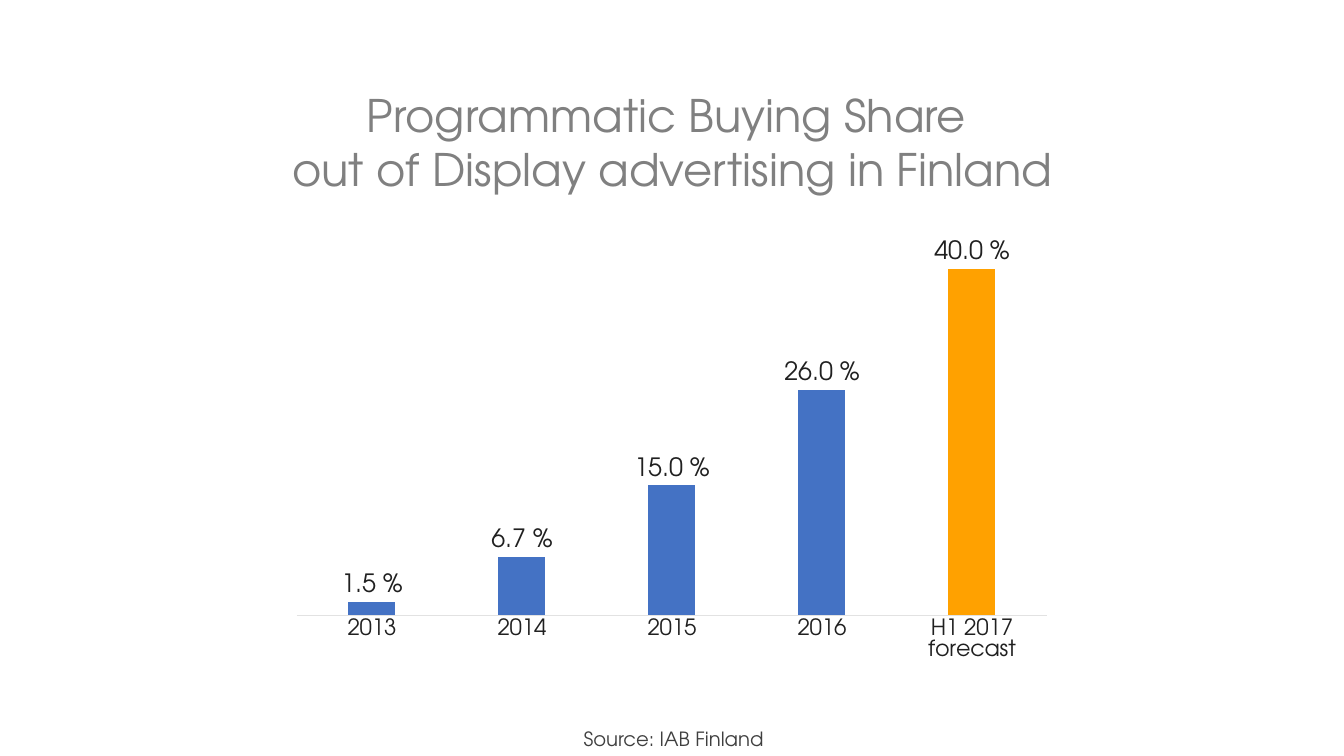
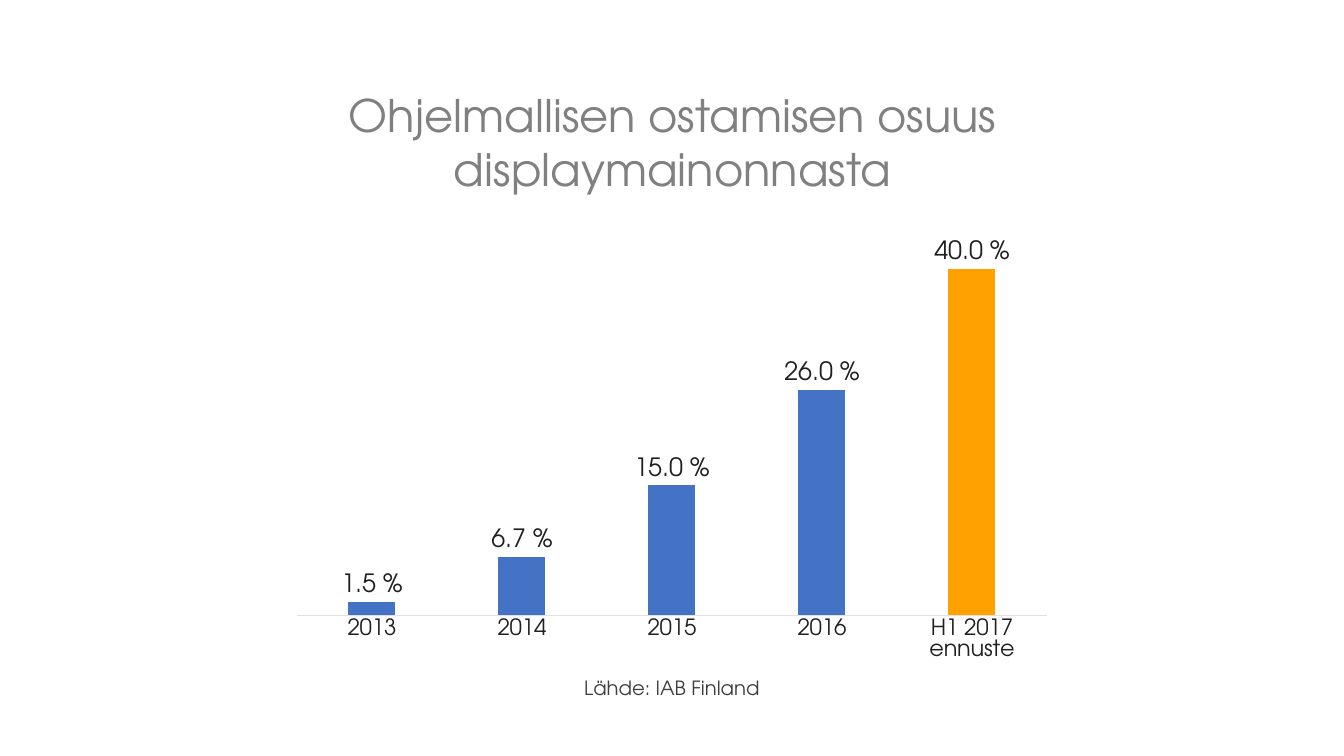
from dataclasses import dataclass

from pptx import Presentation
from pptx.chart.data import CategoryChartData
from pptx.dml.color import RGBColor
from pptx.enum.chart import XL_CHART_TYPE, XL_LABEL_POSITION, XL_TICK_MARK
from pptx.enum.text import MSO_ANCHOR, MSO_AUTO_SIZE, PP_ALIGN
from pptx.util import Inches, Pt

COLUMN_CLUSTERED = XL_CHART_TYPE.COLUMN_CLUSTERED
OUTSIDE_END = XL_LABEL_POSITION.OUTSIDE_END
NO_TICK = XL_TICK_MARK.NONE
TOP = MSO_ANCHOR.TOP
NO_FIT = MSO_AUTO_SIZE.NONE
CENTER = PP_ALIGN.CENTER

# Grid: 160 columns by 90 rows
SLIDE_WIDTH, SLIDE_HEIGHT = Inches(13.33), Inches(7.5)
COLUMNS, ROWS = 160, 90


@dataclass(frozen=True)
class Theme:
    face: str = "TeX Gyre Adventor"
    chart_face: str = "Calibri"
    title: str = "808080"
    text: str = "3F3F3F"
    label: str = "202020"
    rule: str = "E2E2E2"
    bar: str = "4472C4"
    forecast: str = "FFA100"
    title_size: int = 32
    value_size: int = 18
    category_size: int = 16
    source_size: int = 14
    chart_size: int = 10


THEME = Theme()

# Boxes: left, top, width and height in grid units
TITLE_BOX = (24.1, 9.84, 112, 14.16)
CHART_BOX = (33.5, 20.5, 93, 59.4)

YEARS = ["2013", "2014", "2015", "2016"]
SHARES = [0.015, 0.067, 0.15, 0.26, 0.4]
PERCENT = r"0.0\ %"

SLIDES = [
    {
        "title": "Programmatic Buying Share \vout of Display advertising in Finland",
        "forecast": "H1 2017 forecast",
        "source": "Source: IAB Finland",
        "source_box": (21.5, 85.9, 117.4, 4.1),
    },
    {
        "title": "Ohjelmallisen ostamisen osuus displaymainonnasta",
        "forecast": "H1 2017 ennuste",
        "source": "Lähde: IAB Finland",
        "source_box": (48.8, 79.9, 62.4, 5.3),
    },
]


def place(box):
    """Turn a box in grid units into slide lengths."""
    left, top, width, height = box
    column, row = SLIDE_WIDTH / COLUMNS, SLIDE_HEIGHT / ROWS
    return (round(left * column), round(top * row),
            round(width * column), round(height * row))


def style_font(font, size, color, face=THEME.face):
    font.size = Pt(size)
    font.name = face
    font.color.rgb = RGBColor.from_string(color)


def paint(fill, color):
    fill.solid()
    fill.fore_color.rgb = RGBColor.from_string(color)


def write_centered(frame, text, size, color):
    frame.text = text
    frame.word_wrap = True
    frame.auto_size = NO_FIT
    frame.vertical_anchor = TOP
    paragraph = frame.paragraphs[0]
    paragraph.alignment = CENTER
    style_font(paragraph.font, size, color)


def add_title(slide, box, text):
    title = slide.shapes.title
    title.left, title.top, title.width, title.height = place(box)
    write_centered(title.text_frame, text, THEME.title_size, THEME.title)


def add_source(slide, box, text):
    source = slide.shapes.add_textbox(*place(box))
    write_centered(source.text_frame, text, THEME.source_size, THEME.text)


def add_share_chart(slide, box, forecast_name):
    data = CategoryChartData(number_format=PERCENT)
    data.categories = YEARS + [forecast_name]
    data.add_series("Series 1", SHARES)
    chart = slide.shapes.add_chart(COLUMN_CLUSTERED, *place(box), data).chart
    chart.has_title = False
    chart.has_legend = False
    style_font(chart.font, THEME.chart_size, THEME.text, THEME.chart_face)

    # Axes
    years = chart.category_axis
    years.major_tick_mark = years.minor_tick_mark = NO_TICK
    years.format.line.color.rgb = RGBColor.from_string(THEME.rule)
    years.format.line.width = Pt(0.75)
    style_font(years.tick_labels.font, THEME.category_size, THEME.label)
    scale = chart.value_axis
    scale.minimum_scale, scale.maximum_scale = 0, 0.5
    scale.has_major_gridlines = False
    scale.visible = False

    # Bars, with the forecast set apart
    plot = chart.plots[0]
    plot.vary_by_categories = False
    plot.gap_width, plot.overlap = 219, -27
    bars = plot.series[0]
    paint(bars.format.fill, THEME.bar)
    paint(bars.points[len(YEARS)].format.fill, THEME.forecast)

    # Value labels
    labels = bars.data_labels
    labels.show_value = True
    labels.position = OUTSIDE_END
    labels.number_format = PERCENT
    labels.number_format_is_linked = False
    style_font(labels.font, THEME.value_size, THEME.label)


def add_share_slide(deck, content):
    title_only = deck.slide_layouts[5]
    slide = deck.slides.add_slide(title_only)
    add_title(slide, TITLE_BOX, content["title"])
    add_share_chart(slide, CHART_BOX, content["forecast"])
    add_source(slide, content["source_box"], content["source"])


def main():
    deck = Presentation()
    deck.slide_width, deck.slide_height = SLIDE_WIDTH, SLIDE_HEIGHT
    for content in SLIDES:
        add_share_slide(deck, content)
    deck.save("out.pptx")


if __name__ == "__main__":
    main()
